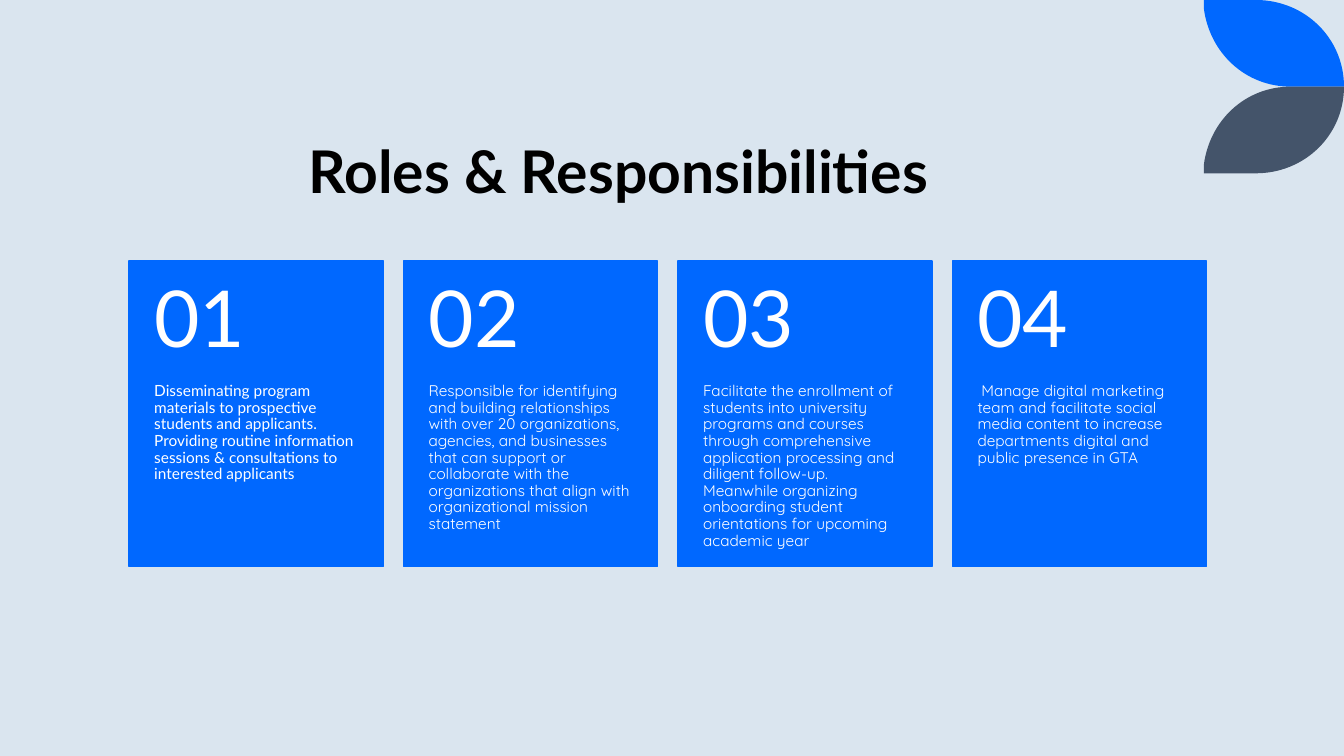
import pptx
import pptx.util
import pptx.dml.color
import pptx.enum.shapes
import pptx.enum.text
import pptx.oxml.ns
import lxml.etree

WIDE, HIGH = 40 / 3, 7.5
COLOR = {"back": "DAE5EF", "blue": "0068FF", "slate": "44546A",
         "black": "000000", "white": "FFFFFF"}
ALIGN = pptx.enum.text.PP_ALIGN
ANCHOR = pptx.enum.text.MSO_ANCHOR
Inch = pptx.util.Inches

# Corners and curve handles of a leaf, as shares of its box
LEAF = [(0, 0), (0.37, 0), (0.72, 0), (1, 0.44), (1, 1),
        (0.62, 1), (0.29, 1), (0.04, 0.6), (0, 0.1)]
BENDS = (1, 5)

CARDS = [
    ("01", [("Lato", "Disseminating program materials to prospective students "
             "and applicants. Providing routine information sessions & "
             "consultations to interested applicants")]),
    ("02", [("Quicksand", "Responsible for identifying and building "
             "relationships with over 20 organizations, agencies, and businesses "
             "that can support or collaborate with the organizations that align "
             "with organizational mission statement")]),
    ("03", [("Quicksand", "Facilitate the enrollment of students into university "
             "programs and courses through comprehensive application processing "
             "and diligent follow-up. Meanwhile organizing onboarding student "
             "orientations for upcoming academic year")]),
    ("04", [("Lato", " "),
            ("Quicksand", "Manage digital marketing team and facilitate social "
             "media content to increase departments digital and public presence "
             "in GTA")]),
]


def rgb(name):
    return pptx.dml.color.RGBColor.from_string(COLOR[name])


def paint(shape, color):
    shape.shadow.inherit = False
    shape.fill.solid()
    shape.fill.fore_color.rgb = rgb(color)


def write(slide, box, parts, size, color="white", bold=False,
          pad=(0.25, 0, 0.25, 0), anchor=ANCHOR.TOP, align=ALIGN.LEFT, lead=0.9):
    """Place a paragraph of (font, text) parts; pad is left, top, right, bottom."""
    frame = slide.shapes.add_textbox(*map(Inch, box)).text_frame
    frame.word_wrap = True
    frame.vertical_anchor = anchor
    (frame.margin_left, frame.margin_top,
     frame.margin_right, frame.margin_bottom) = map(Inch, pad)
    para = frame.paragraphs[0]
    para.alignment, para.line_spacing = align, lead
    for font, text in parts:
        run = para.add_run()
        run.text = text
        run.font.size = pptx.util.Pt(size)
        run.font.name = font
        run.font.bold = bold
        run.font.color.rgb = rgb(color)


def bend(shape):
    """Turn the three lines from each start in BENDS into one cubic curve."""
    name = pptx.oxml.ns.qn
    lines = list(shape.element.iter(name("a:lnTo")))
    for start in BENDS:
        trio = lines[start:start + 3]
        cubic = lxml.etree.Element(name("a:cubicBezTo"))
        trio[0].addprevious(cubic)
        for line in trio:
            cubic.append(line[0])
            line.getparent().remove(line)


def leaf(slide, box, color, flip=False):
    left, top, wide, high = box
    spots = [(Inch(left + x * wide), Inch(top + (1 - y if flip else y) * high))
             for x, y in LEAF]
    form = slide.shapes.build_freeform(*spots[0])
    form.add_line_segments(spots[1:], close=True)
    shape = form.convert_to_shape()
    bend(shape)
    paint(shape, color)
    shape.line.fill.background()


def corner(slide, box):
    left, top, wide, high = box
    half = high / 2
    leaf(slide, (left, top, wide, half), "blue")
    leaf(slide, (left, top + half, wide, half), "slate", flip=True)


def card(slide, box, number, parts):
    left, top, wide, high = box
    head = high * 0.4
    panel = slide.shapes.add_shape(
        pptx.enum.shapes.MSO_SHAPE.RECTANGLE, *map(Inch, box))
    paint(panel, "blue")
    panel.line.color.rgb = rgb("blue")
    panel.line.width = pptx.util.Pt(1)
    write(slide, (left, top + head, wide, high - head), parts, 11,
          pad=(0.25, 0, 0.25, 0.36))
    write(slide, (left, top, wide, head), [("Lato", number)], 56,
          pad=(0.25, 0.18, 0.25, 0.18), anchor=ANCHOR.MIDDLE)


def deck(slide, box, cards, gap=0.2):
    """Share the box out evenly among the cards."""
    left, top, wide, high = box
    pitch = (wide + gap) / len(cards)
    for col, entry in enumerate(cards):
        card(slide, (left + col * pitch, top, pitch - gap, high), *entry)


def main():
    prs = pptx.Presentation()
    prs.slide_width, prs.slide_height = Inch(WIDE), Inch(HIGH)
    slide = prs.slides.add_slide(prs.slide_layouts[6])
    slide.background.fill.solid()
    slide.background.fill.fore_color.rgb = rgb("back")
    corner(slide, (WIDE - 1.39, 0, 1.39, 1.72))
    write(slide, (0.86, 0.36, 10.69, 1.72),
          [("Lato", "Roles & Responsibilities ")], 42,
          color="black", bold=True, pad=(0.1, 0.05, 0.1, 0.05),
          anchor=ANCHOR.BOTTOM, align=ALIGN.CENTER, lead=0.8)
    deck(slide, (1.28, 2.59, 10.69, 3.03), CARDS)
    prs.save("out.pptx")


if __name__ == "__main__":
    main()
